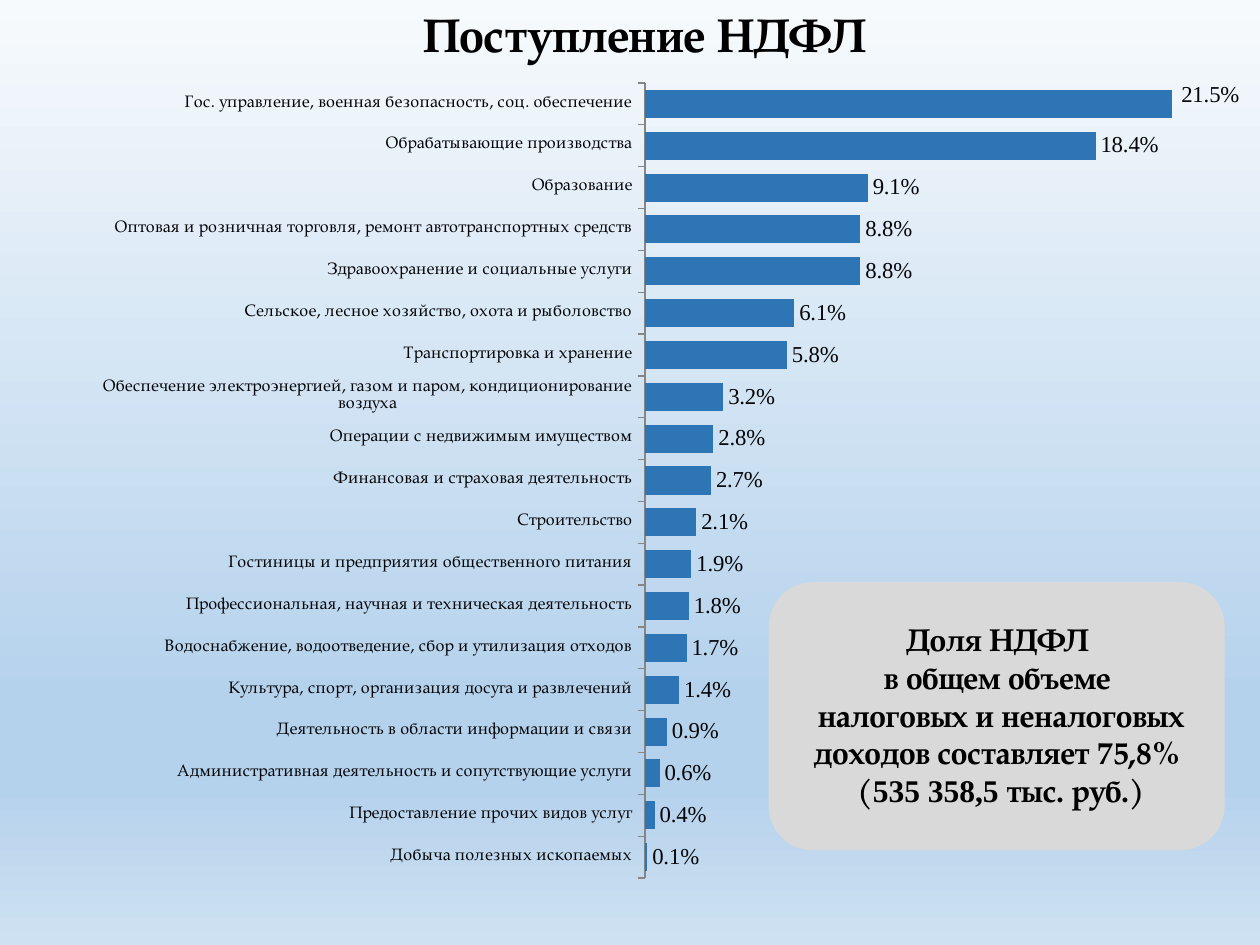
from typing import NamedTuple

from lxml.etree import SubElement
from pptx import Presentation
from pptx.chart.data import CategoryChartData
from pptx.dml.color import RGBColor
from pptx.enum.chart import XL_CHART_TYPE as ChartType
from pptx.enum.chart import XL_LABEL_POSITION as LabelPosition
from pptx.enum.chart import XL_TICK_MARK as TickMark
from pptx.enum.shapes import MSO_SHAPE as ShapeKind
from pptx.enum.text import MSO_ANCHOR as Anchor
from pptx.enum.text import PP_ALIGN as Align
from pptx.oxml import parse_xml
from pptx.oxml.ns import nsdecls, qn
from pptx.util import Inches, Pt

SERIF = "TeX Gyre Pagella"
TIMES = "Times New Roman"
COLORS = {
    "text": "000000",
    "label": "040508",
    "bar": "2E75B6",
    "axis": "868686",
    "callout": "D9D9D9",
}
BACKGROUND_STOPS = [(0, "F7FAFD"), (74, "B5D2EC"), (83, "B5D2EC"), (100, "CEE1F2")]


class Box(NamedTuple):
    left: float
    top: float
    width: float
    height: float

    def lengths(self) -> list:
        return [Inches(value) for value in self]


class Industry(NamedTuple):
    name: str
    percent: float


TITLE_BOX = Box(0.43, 0.05, 9.37, 0.49)
CHART_BOX = Box(0.43, 0.6, 9.55, 6.54)
CALLOUT_BOX = Box(6.1, 4.62, 3.62, 2.13)
CALLOUT_TEXT_BOX = Box(6.17, 4.74, 3.55, 1.73)

INDUSTRIES = [
    Industry("Гос. управление, военная безопасность, соц. обеспечение", 21.5),
    Industry("Обрабатывающие производства", 18.4),
    Industry("Образование", 9.1),
    Industry("Оптовая и розничная торговля, ремонт автотранспортных средств", 8.8),
    Industry("Здравоохранение и социальные услуги", 8.8),
    Industry("Сельское, лесное хозяйство, охота и рыболовство", 6.1),
    Industry("Транспортировка и хранение", 5.8),
    Industry("Обеспечение электроэнергией, газом и паром, кондиционирование воздуха", 3.2),
    Industry("Операции с недвижимым имуществом", 2.8),
    Industry("Финансовая и страховая деятельность", 2.7),
    Industry("Строительство", 2.1),
    Industry("Гостиницы и предприятия общественного питания", 1.9),
    Industry("Профессиональная, научная и техническая деятельность", 1.8),
    Industry("Водоснабжение, водоотведение, сбор и утилизация отходов", 1.7),
    Industry("Культура, спорт, организация досуга и развлечений", 1.4),
    Industry("Деятельность в области информации и связи", 0.9),
    Industry("Административная деятельность и сопутствующие услуги", 0.6),
    Industry("Предоставление прочих видов услуг", 0.4),
    Industry("Добыча полезных ископаемых", 0.1),
]

# Each paragraph is a list of (text, font name) runs.
CALLOUT_PARAGRAPHS = [
    [("Доля НДФЛ ", SERIF)],
    [("в общем объеме ", SERIF)],
    [("налоговых и неналоговых доходов составляет 75,8% ", SERIF)],
    [("(", SERIF), ("535 358,5 ", TIMES), ("тыс. руб.)", SERIF)],
]


def color(name: str) -> RGBColor:
    return RGBColor.from_string(COLORS[name])


def style_font(font, size: float, color_name: str, name: str, bold: bool = False) -> None:
    font.size = Pt(size)
    font.color.rgb = color(color_name)
    font.name = name
    font.bold = bold


def paint_background(slide) -> None:
    fill = slide.background.fill
    fill.gradient()
    fill.gradient_angle = 270
    stops = slide.background._cSld.find(".//" + qn("a:gsLst"))
    for stop in list(stops):
        stops.remove(stop)
    for percent, hex_color in BACKGROUND_STOPS:
        stop = SubElement(stops, qn("a:gs"), pos=str(percent * 1000))
        SubElement(stop, qn("a:srgbClr"), val=hex_color)


def add_title(slide, text: str) -> None:
    title = slide.shapes.title
    title.left, title.top, title.width, title.height = TITLE_BOX.lengths()
    title.text_frame.text = text
    title.text_frame.vertical_anchor = Anchor.MIDDLE
    paragraph = title.text_frame.paragraphs[0]
    paragraph.alignment = Align.CENTER
    paragraph.line_spacing = 0.9
    style_font(paragraph.font, 27, "text", SERIF, bold=True)


def manual_layout(**settings):
    """Build a c:layout element from manual layout settings in schema order."""
    layout = parse_xml(f"<c:layout {nsdecls('c')}><c:manualLayout/></c:layout>")
    for name, value in settings.items():
        SubElement(layout[0], qn(f"c:{name}"), val=str(value))
    return layout


def place_plot(chart) -> None:
    plot_area = chart._chartSpace.chart.plotArea
    for layout in plot_area.findall(qn("c:layout")):
        plot_area.remove(layout)
    plot_area.insert(0, manual_layout(
        layoutTarget="inner", xMode="edge", yMode="edge", x=0.491, y=0.009, w=0.509, h=0.965))


def add_industry_chart(slide) -> None:
    rows = INDUSTRIES[::-1]  # bar charts stack categories from the bottom up
    data = CategoryChartData(number_format="0.0%")
    data.categories = [row.name for row in rows]
    data.add_series("Series 1", [round(row.percent / 100, 3) for row in rows])
    chart = slide.shapes.add_chart(ChartType.BAR_CLUSTERED, *CHART_BOX.lengths(), data).chart
    chart.has_legend = False
    chart.has_title = False
    style_font(chart.font, 18, "text", "Calibri")
    place_plot(chart)

    values = chart.value_axis
    values.visible = False
    values.has_major_gridlines = False
    values.minimum_scale, values.maximum_scale = 0, 0.25

    categories = chart.category_axis
    categories.major_tick_mark = TickMark.OUTSIDE
    categories.format.line.color.rgb = color("axis")
    style_font(categories.tick_labels.font, 9.5, "label", SERIF)

    plot = chart.plots[0]
    plot.gap_width = 49
    plot.vary_by_categories = False
    series = plot.series[0]
    series.format.fill.solid()
    series.format.fill.fore_color.rgb = color("bar")
    labels = series.data_labels
    labels.show_value = True
    labels.number_format = "0.0%"
    labels.number_format_is_linked = False
    labels.position = LabelPosition.OUTSIDE_END
    style_font(labels.font, 13, "label", TIMES)

    top_label = series.points[len(rows) - 1].data_label
    style_font(top_label.font, 13, "label", TIMES)
    top_label.position = LabelPosition.OUTSIDE_END
    top_label._dLbl.insert(1, manual_layout(x=0.004, y=-0.01))


def add_callout(slide) -> None:
    panel = slide.shapes.add_shape(ShapeKind.ROUNDED_RECTANGLE, *CALLOUT_BOX.lengths())
    panel.shadow.inherit = False
    panel.fill.solid()
    panel.fill.fore_color.rgb = color("callout")
    panel.line.fill.background()

    frame = slide.shapes.add_textbox(*CALLOUT_TEXT_BOX.lengths()).text_frame
    frame.word_wrap = True
    frame.vertical_anchor = Anchor.BOTTOM
    for index, runs in enumerate(CALLOUT_PARAGRAPHS):
        paragraph = frame.add_paragraph() if index else frame.paragraphs[0]
        paragraph.alignment = Align.CENTER
        for text, font_name in runs:
            run = paragraph.add_run()
            run.text = text
            style_font(run.font, 18, "text", font_name, bold=True)


def main() -> None:
    presentation = Presentation()
    presentation.slide_width, presentation.slide_height = Inches(10), Inches(7.5)
    slide = presentation.slides.add_slide(presentation.slide_layouts.get_by_name("Title Only"))
    paint_background(slide)
    add_title(slide, "Поступление НДФЛ")
    add_industry_chart(slide)
    add_callout(slide)
    presentation.save("out.pptx")


if __name__ == "__main__":
    main()
